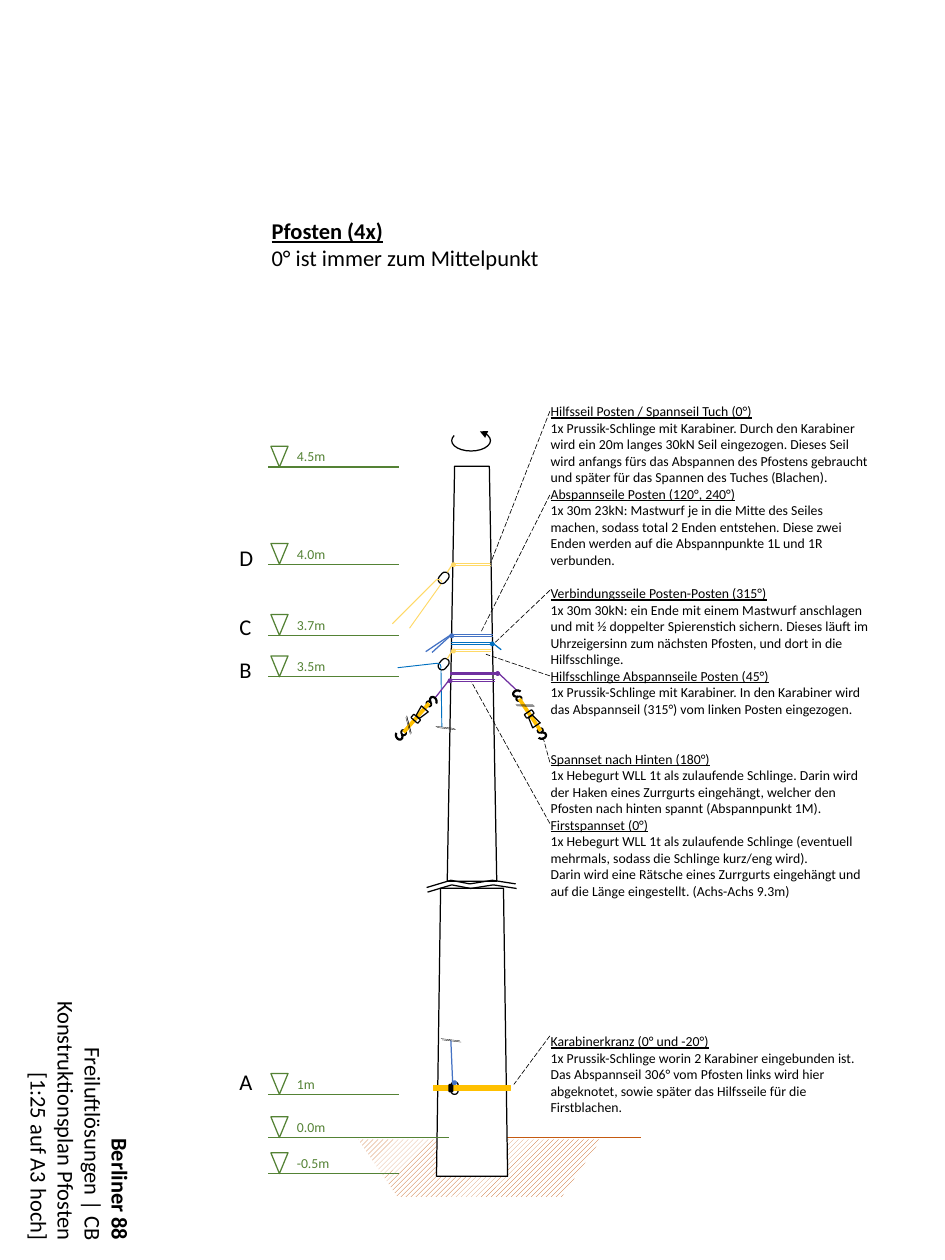
"""Builds the construction plan of a guyed tent post."""
import math
from dataclasses import dataclass

from lxml import etree
from pptx import Presentation
from pptx.dml.color import RGBColor
from pptx.enum import dml, shapes as kinds, text as texts
from pptx.oxml import ns
from pptx.util import Pt

KIND = kinds.MSO_SHAPE


@dataclass(frozen=True)
class Theme:
    """Colours and type sizes."""
    font: str = "Calibri"
    heading: float = 18
    body: float = 11
    black: str = "000000"
    white: str = "FFFFFF"
    level: str = "548235"
    soil: str = "C55A11"
    guy: str = "4472C4"
    link: str = "0070C0"
    helper: str = "FFD966"
    strap: str = "7030A0"
    ratchet: str = "FFC000"


THEME = Theme()


def rgb(value):
    """Return a colour for a hex string."""
    return RGBColor.from_string(value)


@dataclass
class Box:
    """A region whose parts are placed in points from its top left corner."""
    shapes: object
    left: float
    top: float

    def at(self, x, y):
        """Return the slide position of a local point."""
        return Pt(self.left + x), Pt(self.top + y)

    def group(self):
        """Return the same region drawing into a new group."""
        return Box(self.shapes.add_group_shape().shapes, self.left, self.top)

    def line(self, x1, y1, x2, y2, color, width=1.0, dash=None):
        """Draw a straight line."""
        connector = self.shapes.add_connector(
            kinds.MSO_CONNECTOR.STRAIGHT, *self.at(x1, y1), *self.at(x2, y2))
        connector.line.color.rgb = rgb(color)
        connector.line.width = Pt(width)
        if dash:
            connector.line.dash_style = dash
        etree.SubElement(connector._element.spPr, ns.qn("a:effectLst"))

    def finish(self, shape, line, width, fill):
        """Set outline and fill and drop the shadow."""
        shape.shadow.inherit = False
        if fill:
            shape.fill.solid()
            shape.fill.fore_color.rgb = rgb(fill)
        else:
            shape.fill.background()
        if line:
            shape.line.color.rgb = rgb(line)
            shape.line.width = Pt(width)
        else:
            shape.line.fill.background()
        return shape

    def shape(self, kind, x, y, w, h, line=THEME.black, width=1.0, fill=None,
              adjust=(), turn=0, flip=None):
        """Draw a preset shape."""
        shape = self.shapes.add_shape(kind, *self.at(x, y), Pt(w), Pt(h))
        for index, value in enumerate(adjust):
            shape.adjustments[index] = value
        shape.rotation = turn
        if flip:
            shape._element.spPr.find(ns.qn("a:xfrm")).set(flip, "1")
        return self.finish(shape, line, width, fill)

    def outline(self, points, color, width):
        """Draw an open path."""
        corners = [self.at(*point) for point in points]
        builder = self.shapes.build_freeform(*corners[0])
        builder.add_line_segments(corners[1:], close=False)
        return self.finish(builder.convert_to_shape(), color, width, None)

    def text(self, w, h, paragraphs, size, x=0, y=0, color=THEME.black, wrap=False):
        """Write paragraphs given as text, style letters and space before."""
        shape = self.shapes.add_textbox(*self.at(x, y), Pt(w), Pt(h))
        frame = shape.text_frame
        frame.word_wrap = wrap
        frame.auto_size = texts.MSO_AUTO_SIZE.SHAPE_TO_FIT_TEXT
        for index, (words, style, space) in enumerate(paragraphs):
            paragraph = frame.paragraphs[0] if index == 0 else frame.add_paragraph()
            paragraph.text = words
            if space:
                paragraph.space_before = Pt(space)
            font = paragraph.font
            font.name, font.size, font.color.rgb = THEME.font, Pt(size), rgb(color)
            font.bold, font.underline = "b" in style, "u" in style
        return shape


def draw_ground(box):
    """Draw the ground line and the hatched soil."""
    box.line(0, 0, 255.6, 0, THEME.soil, 1.25)
    soil = box.shape(KIND.TRAPEZOID, 29.5, 1.4, 194.4, 46, None,
                     adjust=[0.684], flip="flipV")
    soil.fill.patterned()
    soil.fill.pattern = dml.MSO_PATTERN.WIDE_UPWARD_DIAGONAL
    soil.fill.fore_color.rgb = rgb(THEME.soil)
    soil.fill.back_color.rgb = rgb(THEME.white)


def draw_post(box):
    """Draw both post sections, the break between them and the turning arrow."""
    box.shape(KIND.TRAPEZOID, 17.8, 33, 39.6, 331.9, adjust=[0.149])
    box.shape(KIND.TRAPEZOID, 9.2, 370.6, 56.9, 230.4, fill=THEME.white, adjust=[0.058])
    for x, y in ((1.3, 364.2), (2, 367.9)):
        zigzag = ((0, 5.8), (19.4, 0), (34.6, 2.9), (52.6, 0), (71.3, 2.9))
        box.outline([(x + dx, y + dy) for dx, dy in zigzag], THEME.black, 1)
    arc = box.shape(KIND.ARC, 21.4, 4.2, 31, 16.6, adjust=[188.236, 118.04])
    etree.SubElement(arc.line._get_or_add_ln(), ns.qn("a:headEnd"), type="triangle")


def draw_levels(box):
    """Draw the height marks and the letters of the fixing points."""
    levels = (("4.5m", 373.7, None, 0), ("4.0m", 451.4, "D", 431.3),
              ("3.7m", 508.3, "C", 486.7), ("3.5m", 541.4, "B", 521.3),
              ("1m", 875.5, "A", 851), ("0.0m", 910.1, None, 0), ("-0.5m", 938.9, None, 0))
    widths = {"1m": 28.8, "-0.5m": 41}
    for label, y, letter, letter_top in levels:
        mark = box.group()
        mark.line(30.2, y, 175 if label == "0.0m" else 134.6, y, THEME.level)
        mark.shape(KIND.ISOSCELES_TRIANGLE, 32.3, y - 16.6, 13.7, 16.6,
                   THEME.level, flip="flipV")
        mark.text(widths.get(label, 37.4), 20.9, [(label, "", 0)], THEME.body,
                  46, y - 18.7, THEME.level)
        if letter:
            box.text(25.9, 28.8, [(letter, "", 0)], THEME.heading, 0, letter_top, wrap=True)


def draw_sling(box, left, right, top, knot, color, tails):
    """Draw a double rope around the post with its knot and loose ends."""
    for y in (top, top + 1.4):
        box.line(right, y, left, y, color)
    for tail in tails:
        box.line(*tail, color)
    box.shape(KIND.OVAL, knot, top - 0.4, 2.9, 2.9, color, fill=color)


def draw_cut(box, x, y):
    """Draw the double stroke where a rope is cut off."""
    for shift in (0, 1):
        box.line(x + shift, y + shift, x + shift + 15.1, y + shift + 1.8, THEME.black, 0.25)


def draw_ratchet(box, x, y, turn):
    """Draw a ratchet strap with two hooks, turned about its centre."""
    cosine, sine = math.cos(math.radians(turn)), math.sin(math.radians(turn))

    def spot(dx, dy):
        return x + dx * cosine - dy * sine, y + dx * sine + dy * cosine

    def part(kind, dx, dy, w, h, angle, width=1.0, adjust=()):
        cx, cy = spot(dx, dy)
        box.shape(kind, cx - w / 2, cy - h / 2, w, h, width=width, adjust=adjust,
                  turn=(angle + turn) % 360)

    for side, angle in ((1, 324.2), (-1, 145.7)):
        part(KIND.OVAL, 10.1 * side, -11.5 * side, 3.6, 4.3, angle, 1.5)
        part(KIND.ARC, 13.7 * side, -14 * side, 5, 6.5, angle + 6.9, 1.75, [104.474, 43.897])
    box.line(*spot(-10, 11.2), *spot(10.2, -11.9), THEME.ratchet, 3)
    part(KIND.TRAPEZOID, 4, -4.3, 7.2, 8.6, 221.4)
    part(KIND.ROUNDED_RECTANGLE, -0.4, 0.4, 7.2, 3.6, 221.4)
    for dx, dy in ((0, 0), (0, -0.7), (-0.7, 0.7)):
        box.line(*spot(dx - 4, dy + 12.2), *spot(dx - 7.6, dy - 1.4), THEME.black, 0.25)


def draw_upper_ropes(box):
    """Draw the slings, carabiners and straps of the post head."""
    draw_sling(box, 22.9, 54.6, 67.6, 20, THEME.guy,
               [(20, 68.3, 0.6, 81.3), (20.7, 68.3, 5.6, 82)])
    ropes = (
        (10.7, THEME.helper, (12.8, 27.3, -12.4, 62.6),
         [(-26.1, 59), (9.2, 23.7), (11.4, 23.7), (12.8, 24.4), (13.5, 25.1), (12.8, 25.8)]),
        (79.8, THEME.link, (12.8, 96.4, 13.5, 141.8),
         [(-21.8, 94.2), (9.9, 90.6), (12.1, 91.4), (12.8, 93.5), (12.8, 94.2), (12.1, 95)]))
    for top, color, end, points in ropes:
        box.shape(KIND.ROUNDED_RECTANGLE, 9.9, top + 8.3, 10.1, 6.5, adjust=[0.5], turn=310.5)
        box.outline(points, color, 0.75)
        box.line(*end, color, 0.75)
        draw_sling(box, 22.9, 53.1, top, 21.4, THEME.helper,
                   [(21.4, top + 1.6, 17.8, top + 7.2)])
    draw_cut(box, 8.5, 141)
    draw_sling(box, 20.7, 54.6, 74.1, 52.4, THEME.link, [(54.6, 74.8, 61, 79.8)])
    straps = ((19.3, 56, 103.6, 18.6, (18.6, 105, 7.8, 118.7), (-7, 134.6, 0)),
              (20, 56.7, 97.8, 56.7, (73.3, 112.2, 58.9, 98.6), (83.7, 131.7, 105)))
    for left, right, top, knot, tail, ratchet in straps:
        strap = box.group()
        draw_sling(strap, left, right, top, knot, THEME.strap, [tail])
        draw_ratchet(strap, *ratchet)


def draw_carabiner_ring(box):
    """Draw the carabiner ring at the foot of the post."""
    box.shape(KIND.ROUNDED_RECTANGLE, 11.6, 36.7, 10.1, 5.8, adjust=[0.5],
              turn=270.9, flip="flipH")
    box.shape(KIND.RECTANGLE, 0, 37.4, 61.2, 4.3, THEME.ratchet, fill=THEME.ratchet)
    box.shape(KIND.ROUNDED_RECTANGLE, 10.8, 38.1, 5.8, 2.9, fill=THEME.black,
              turn=269.7, flip="flipH")
    box.line(15.2, 36.7, 13.7, 1.4, THEME.guy)
    box.shape(KIND.OVAL, 15.2, 33.8, 2.9, 2.9, THEME.guy, fill=THEME.guy)
    draw_cut(box, 5.8, 0)


def draw_notes(box):
    """Write the notes and draw their dashed leaders."""
    row = 13.4
    notes = (
        ("Hilfsseil Posten / Spannseil Tuch (0°)", "u", 0),
        ("1x Prussik-Schlinge mit Karabiner. Durch den Karabiner wird ein 20m langes 30kN Seil eingezogen. Dieses Seil wird anfangs fürs das Abspannen des Pfostens gebraucht und später für das Spannen des Tuches (Blachen).", "", 0),
        ("Abspannseile Posten (120°, 240°)", "u", 0),
        ("1x 30m 23kN: Mastwurf je in die Mitte des Seiles machen, sodass total 2 Enden entstehen. Diese zwei Enden werden auf die Abspannpunkte 1L und 1R verbunden.", "", 0),
        ("Verbindungsseile Posten-Posten (315°)", "u", row),
        ("1x 30m 30kN: ein Ende mit einem Mastwurf anschlagen und mit ½ doppelter Spierenstich sichern. Dieses läuft im Uhrzeigersinn zum nächsten Pfosten, und dort in die Hilfsschlinge.", "", 0),
        ("Hilfsschlinge Abspannseile Posten (45°)", "u", 0),
        ("1x Prussik-Schlinge mit Karabiner. In den Karabiner wird das Abspannseil (315°) vom linken Posten eingezogen.", "", 0),
        ("Spannset nach Hinten (180°)", "u", 2 * row),
        ("1x Hebegurt WLL 1t als zulaufende Schlinge. Darin wird der Haken eines Zurrgurts eingehängt, welcher den Pfosten nach hinten spannt (Abspannpunkt 1M).", "", 0),
        ("Firstspannset (0°)", "u", 0),
        ("1x Hebegurt WLL 1t als zulaufende Schlinge (eventuell mehrmals, sodass die Schlinge kurz/eng wird).", "", 0),
        ("Darin wird eine Rätsche eines Zurrgurts eingehängt und auf die Länge eingestellt. (Achs-Achs 9.3m)", "", 0),
        ("Karabinerkranz (0° und -20°)", "u", 8 * row),
        ("1x Prussik-Schlinge worin 2 Karabiner eingebunden ist. Das Abspannseil 306° vom Pfosten links wird hier abgeknotet, sowie später das Hilfsseile für die Firstblachen.", "", 0))
    shape = box.text(272.9, 620.6, notes, THEME.body, wrap=True)
    shape.text_frame.margin_top = Pt(3.6 + row)
    leaders = ((23.7, -41, 145.4), (90.7, -48.9, 200.9), (167, -38.1, 209.5),
               (235.4, -44.6, 218.1), (304.5, 0.8, 283.7), (353.5, -56.1, 240.5),
               (523.4, -22.3, 562.3))
    for start, x, y in leaders:
        box.line(6.5, start, x, y, THEME.black, 0.5, dml.MSO_LINE.LONG_DASH)


def draw_title(box):
    """Write the heading."""
    box.text(231.1, 51.1, [("Pfosten (4x)", "bu", 0),
                           ("0° ist immer zum Mittelpunkt", "", 0)], THEME.heading)


def draw_plan_label(box):
    """Write the turned plan label."""
    lines = (("Berliner 88", "b", 0), ("Freiluftlösungen | CB", "", 0),
             ("Konstruktionsplan Pfosten", "", 0), ("[1:25 auf A3 hoch]", "", 0))
    shape = box.text(208.1, 94.3, lines, THEME.heading)
    shape.rotation = 90
    shape.fill.solid()
    shape.fill.fore_color.rgb = rgb(THEME.white)
    for paragraph in shape.text_frame.paragraphs:
        paragraph.alignment = texts.PP_ALIGN.RIGHT


def main():
    """Build and save the slide."""
    presentation = Presentation()
    presentation.slide_width, presentation.slide_height = Pt(756), Pt(1008)
    slide = presentation.slides.add_slide(presentation.slide_layouts[6])
    regions = ((draw_ground, 257, 910.1), (draw_post, 340, 340), (draw_levels, 184.4, 0),
               (draw_title, 210.2, 169.9), (draw_carabiner_ring, 347, 830.9),
               (draw_upper_ropes, 340, 440), (draw_notes, 433.4, 305.3),
               (draw_plan_label, -40.3, 848.2))
    for draw, left, top in regions:
        draw(Box(slide.shapes, left, top))
    presentation.save("out.pptx")


if __name__ == "__main__":
    main()
